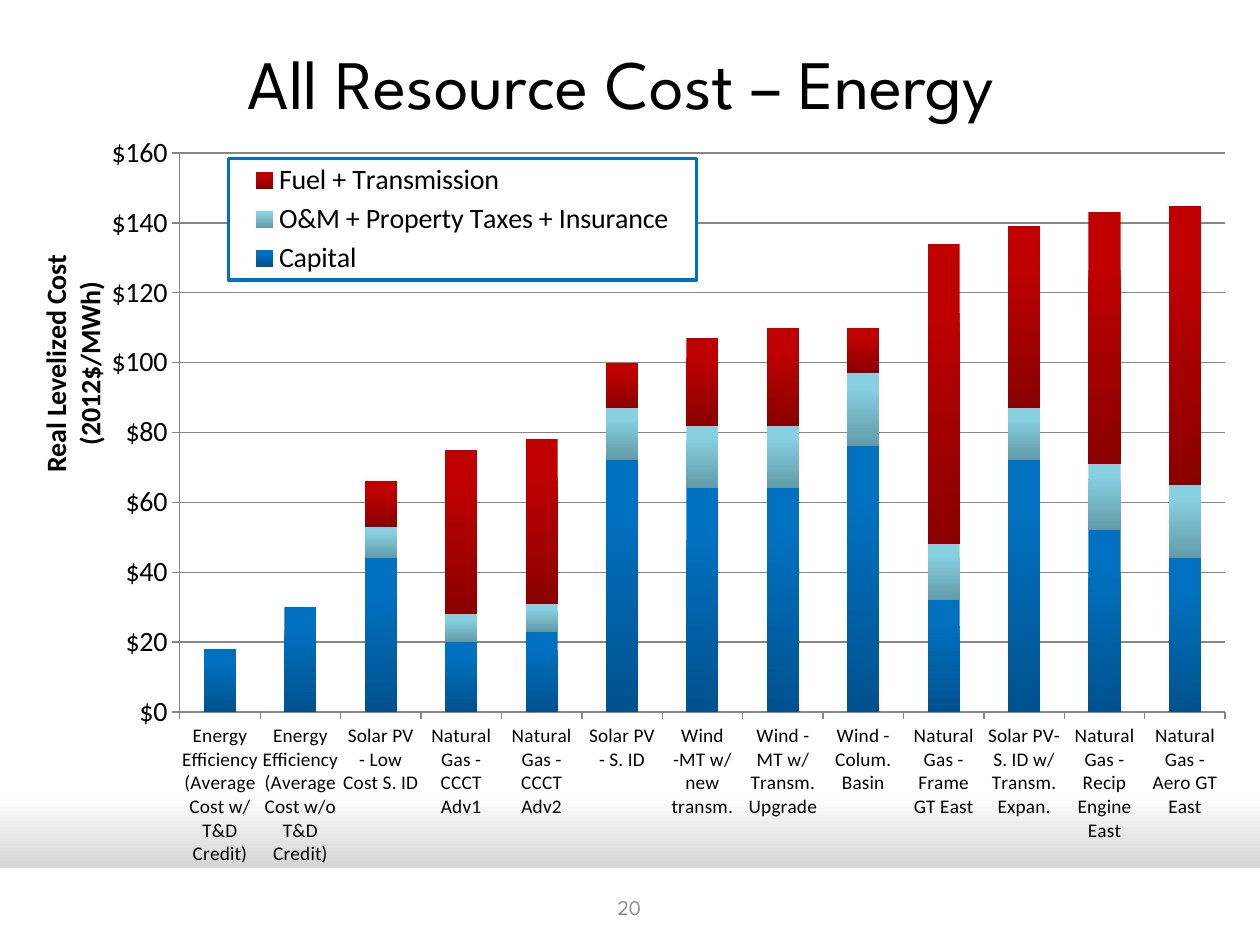
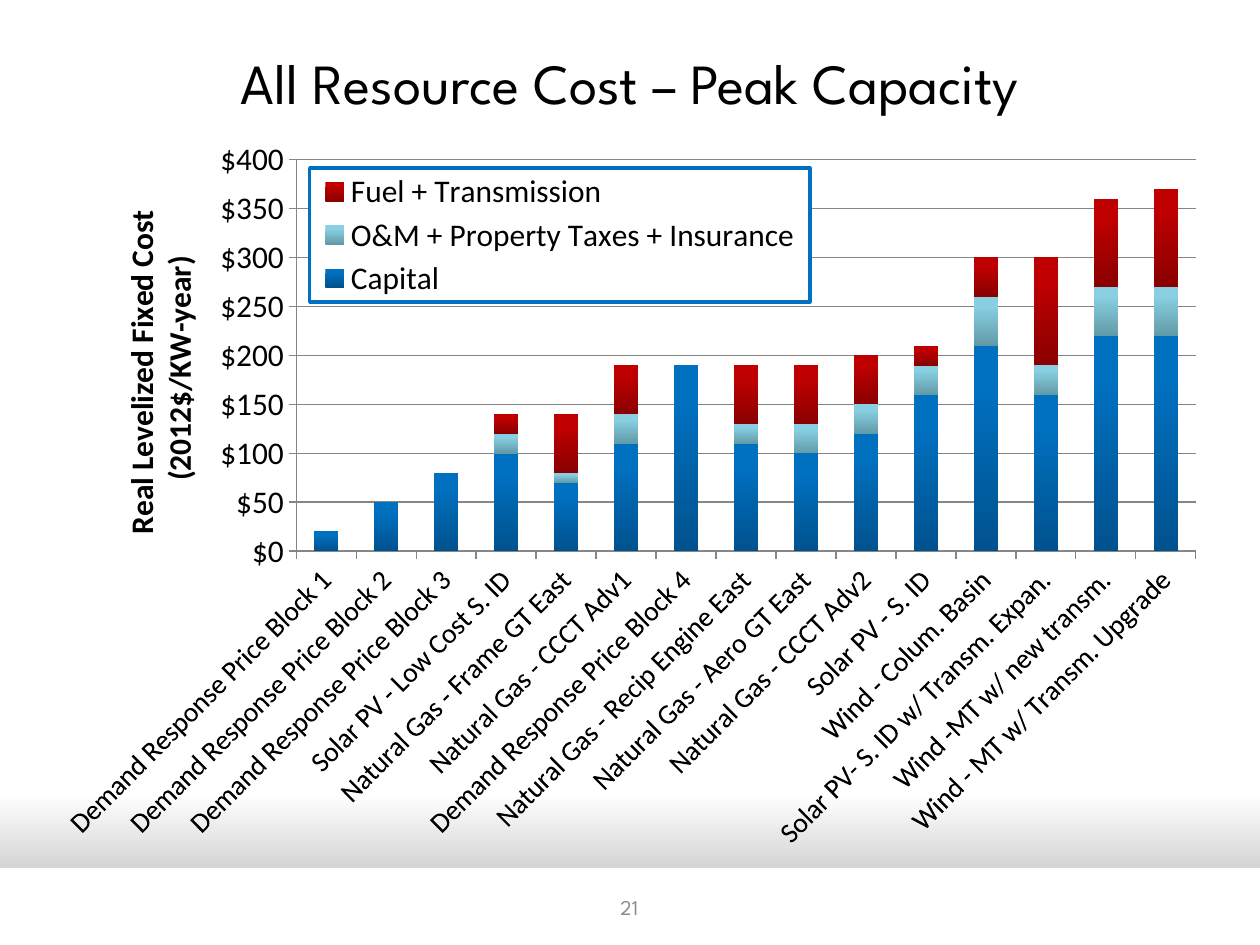
from pptx import Presentation
from pptx import util as u
from pptx.chart.data import CategoryChartData
from pptx.dml.color import RGBColor
from pptx.enum import chart as ch, shapes, text
from pptx.oxml import parse_xml
from pptx.oxml.ns import nsdecls, qn

BLACK = RGBColor(0, 0, 0)
WHITE = RGBColor(255, 255, 255)
SHADE = RGBColor(0xA6, 0xA6, 0xA6)
GREY = RGBColor(0x8C, 0x8C, 0x8C)
RULE = RGBColor(0x86, 0x86, 0x86)
BLUE = RGBColor(0x00, 0x70, 0xC0)
TEAL = RGBColor(0x87, 0xCF, 0xE1)
RED = RGBColor(0xC0, 0x00, 0x00)
NAVY = RGBColor(0x00, 0x52, 0x8E)
SLATE = RGBColor(0x62, 0x9B, 0xA8)
WINE = RGBColor(0x8A, 0x00, 0x00)
HEAD = "League Spartan"
BODY = "Calibri"

PARTS = [
    ("Capital", BLUE, NAVY),
    ("O&M + Property Taxes + Insurance", TEAL, SLATE),
    ("Fuel + Transmission", RED, WINE),
]

PAGES = [
    dict(
        title="All Resource Cost – Energy ", size=39.6, page="20",
        box=(0.17, 1.08, 9.67, 5.83), plot=(0.13, 0.023, 0.858, 0.761),
        key=(0.17, 0.03, 0.384, 0.166), name=(0.01, 0.148),
        label="Real Levelized Cost \n(2012$/MWh) ",
        fonts=dict(cat=11, val=16, name=16, key=16), turn=0, top=160, step=20,
        rows=[
            ("Energy Efficiency (Average Cost w/ T&D Credit)", 18, None, None),
            ("Energy Efficiency (Average Cost w/o T&D Credit)", 30, 0, 0),
            ("Solar PV - Low Cost S. ID", 44, 9, 13),
            ("Natural Gas - CCCT Adv1", 20, 8, 47),
            ("Natural Gas - CCCT Adv2", 23, 8, 47),
            ("Solar PV - S. ID", 72, 15, 13),
            ("Wind -MT w/ new transm.", 64, 18, 25),
            ("Wind - MT w/ Transm. Upgrade", 64, 18, 28),
            ("Wind - Colum. Basin", 76, 21, 13),
            ("Natural Gas - Frame GT East", 32, 16, 86),
            ("Solar PV- S. ID w/ Transm. Expan.", 72, 15, 52),
            ("Natural Gas - Recip Engine East", 52, 19, 72),
            ("Natural Gas - Aero GT East", 44, 21, 80),
        ],
    ),
    dict(
        title="All Resource Cost – Peak Capacity", size=32.4, page="21",
        box=(0.5, 1, 9, 5.92), plot=(0.202, 0.045, 0.797, 0.525),
        key=(0.214, 0.056, 0.443, 0.18), name=(0.043, 0.106),
        label="Real Levelized Fixed Cost\n (2012$/KW-year)",
        fonts=dict(cat=16, val=18, name=18, key=18), turn=-45, top=400, step=50,
        rows=[
            ("Demand Response Price Block 1", 20, None, None),
            ("Demand Response Price Block 2", 50, None, None),
            ("Demand Response Price Block 3", 80, None, None),
            ("Solar PV - Low Cost S. ID", 100, 20, 20),
            ("Natural Gas - Frame GT East", 70, 10, 60),
            ("Natural Gas - CCCT Adv1", 110, 30, 50),
            ("Demand Response Price Block 4", 190, None, None),
            ("Natural Gas - Recip Engine East", 110, 20, 60),
            ("Natural Gas - Aero GT East", 100, 30, 60),
            ("Natural Gas - CCCT Adv2", 120, 30, 50),
            ("Solar PV - S. ID", 160, 30, 20),
            ("Wind - Colum. Basin", 210, 50, 40),
            ("Solar PV- S. ID w/ Transm. Expan.", 160, 30, 110),
            ("Wind -MT w/ new transm.", 220, 50, 90),
            ("Wind - MT w/ Transm. Upgrade", 220, 50, 100),
        ],
    ),
]


def write(words, slide, box, size, color=BLACK, font=HEAD):
    frame = slide.shapes.add_textbox(*map(u.Inches, box)).text_frame
    frame.word_wrap = True
    frame.vertical_anchor = text.MSO_ANCHOR.MIDDLE
    para = frame.paragraphs[0]
    para.text = words
    para.alignment = text.PP_ALIGN.CENTER
    para.font.size = u.Pt(size)
    para.font.name = font
    para.font.color.rgb = color


def place(host, spot, box, inner=False):
    old = host.find(qn("c:layout"))
    if old is not None:
        host.remove(old)
    target = '<c:layoutTarget val="inner"/>' if inner else ""
    modes = '<c:xMode val="edge"/><c:yMode val="edge"/>'
    sides = "".join(f'<c:{tag} val="{val}"/>' for tag, val in zip("xywh", box))
    host.insert(spot, parse_xml(
        f'<c:layout {nsdecls("c")}><c:manualLayout>{target}{modes}{sides}'
        '</c:manualLayout></c:layout>'))


deck = Presentation()
deck.slide_width = u.Inches(10)
deck.slide_height = u.Inches(7.5)

back = deck.slide_master.background.fill
back.gradient()
back.gradient_angle = 270
for stop, color, spot in zip(back.gradient_stops, (WHITE, SHADE), (0.84, 1)):
    stop.color.rgb = color
    stop.position = spot

for page in PAGES:
    slide = deck.slides.add_slide(deck.slide_layouts[6])
    band = slide.shapes.add_shape(
        shapes.MSO_SHAPE.RECTANGLE, *map(u.Inches, (0, 6.89, 10, 0.61)))
    band.shadow.inherit = False
    band.fill.solid()
    band.fill.fore_color.rgb = WHITE
    band.line.fill.background()
    write(page["title"], slide, (0.5, 0.3, 9, 0.7), page["size"])

    names, *cols = zip(*page["rows"])
    data = CategoryChartData(number_format='"$"#,##0')
    data.categories = names
    for part, vals in zip(PARTS, cols):
        data.add_series(part[0], vals)
    chart = slide.shapes.add_chart(
        ch.XL_CHART_TYPE.COLUMN_STACKED, *map(u.Inches, page["box"]), data).chart
    fonts = page["fonts"]
    chart.has_title = False
    chart.font.name = BODY
    chart.font.size = u.Pt(18)
    chart.font.color.rgb = BLACK

    plot = chart.plots[0]
    plot.gap_width = 150
    plot.overlap = 100
    plot.vary_by_categories = False
    for bar, part in zip(plot.series, PARTS):
        fill = bar.format.fill
        fill.gradient()
        fill.gradient_angle = 270
        for stop, color, spot in zip(fill.gradient_stops, part[1:], (0.2, 1)):
            stop.color.rgb = color
            stop.position = spot
    place(chart._chartSpace.chart.plotArea, 0, page["plot"], inner=True)

    cat, val = chart.category_axis, chart.value_axis
    for axis, size in ((cat, fonts["cat"]), (val, fonts["val"])):
        axis.tick_labels.font.size = u.Pt(size)
        axis.major_tick_mark = ch.XL_TICK_MARK.OUTSIDE
        axis.minor_tick_mark = ch.XL_TICK_MARK.NONE
        axis.format.line.color.rgb = RULE
        axis.format.line.width = u.Pt(0.75)
    turn = cat._element.find(qn("c:txPr")).find(qn("a:bodyPr"))
    turn.set("rot", str(page["turn"] * 60000))
    turn.set("vert", "horz")

    val.minimum_scale = 0
    val.maximum_scale = page["top"]
    val.major_unit = page["step"]
    val.tick_labels.number_format = '"$"#,##0'
    val.tick_labels.number_format_is_linked = False
    val.has_major_gridlines = True
    val.major_gridlines.format.line.color.rgb = RULE
    val.major_gridlines.format.line.width = u.Pt(0.75)

    title = val.axis_title
    frame = title.text_frame
    frame.text = page["label"]
    for para in frame.paragraphs:
        para.font.size = u.Pt(fonts["name"])
        para.font.bold = True
        para.font.name = BODY
        para.font.color.rgb = BLACK
    turn = frame._txBody.find(qn("a:bodyPr"))
    turn.set("rot", "-5400000")
    turn.set("vert", "horz")
    place(title._element, 1, page["name"])

    chart.has_legend = True
    key = chart.legend
    key.position = ch.XL_LEGEND_POSITION.RIGHT
    key.include_in_layout = True
    key.font.size = u.Pt(fonts["key"])
    key.font.name = BODY
    key.font.color.rgb = BLACK
    over = key._element.find(qn("c:overlay"))
    over.addnext(parse_xml(
        f'<c:spPr {nsdecls("c", "a")}>'
        f'<a:solidFill><a:srgbClr val="{WHITE}"/></a:solidFill>'
        f'<a:ln w="{u.Pt(2)}"><a:solidFill><a:srgbClr val="{BLUE}"/></a:solidFill></a:ln>'
        '</c:spPr>'))
    place(key._element, key._element.index(over), page["key"])

    write(page["page"], slide, (3.83, 7, 2.33, 0.4), 12, color=GREY)

deck.save("out.pptx")
